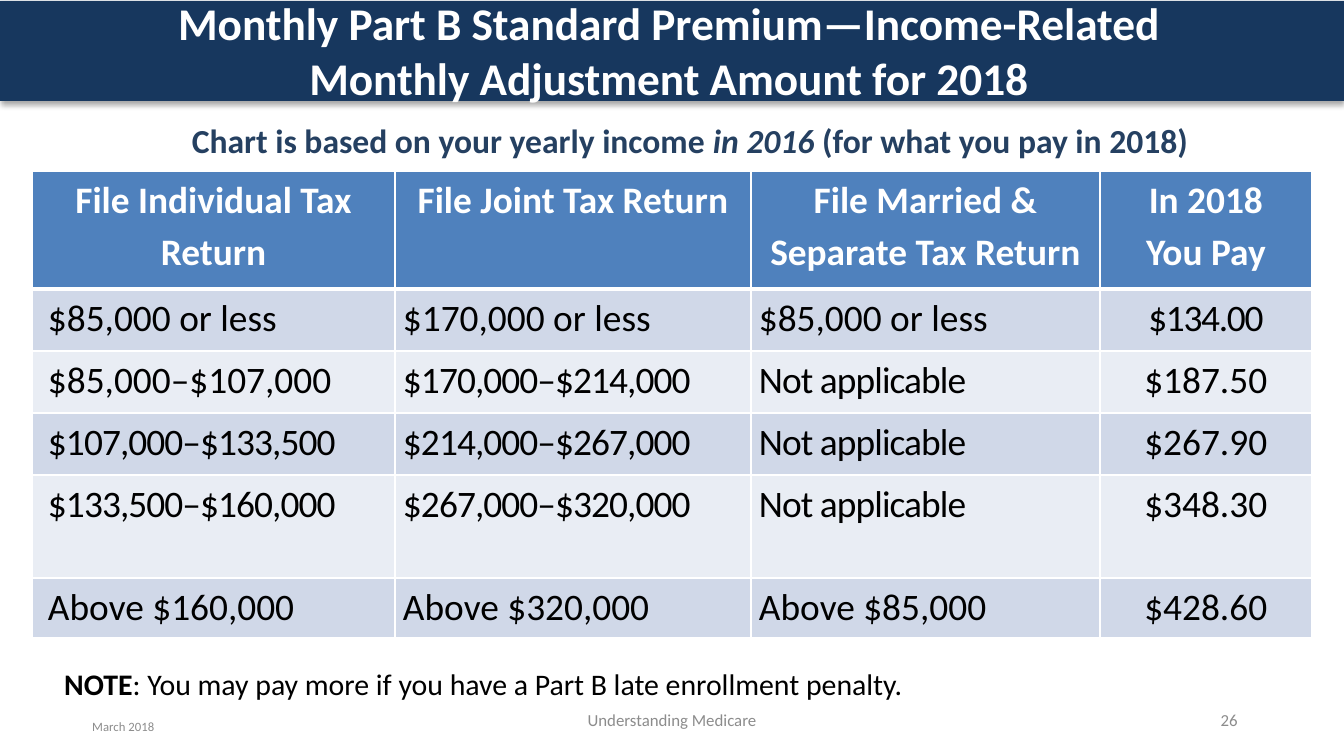
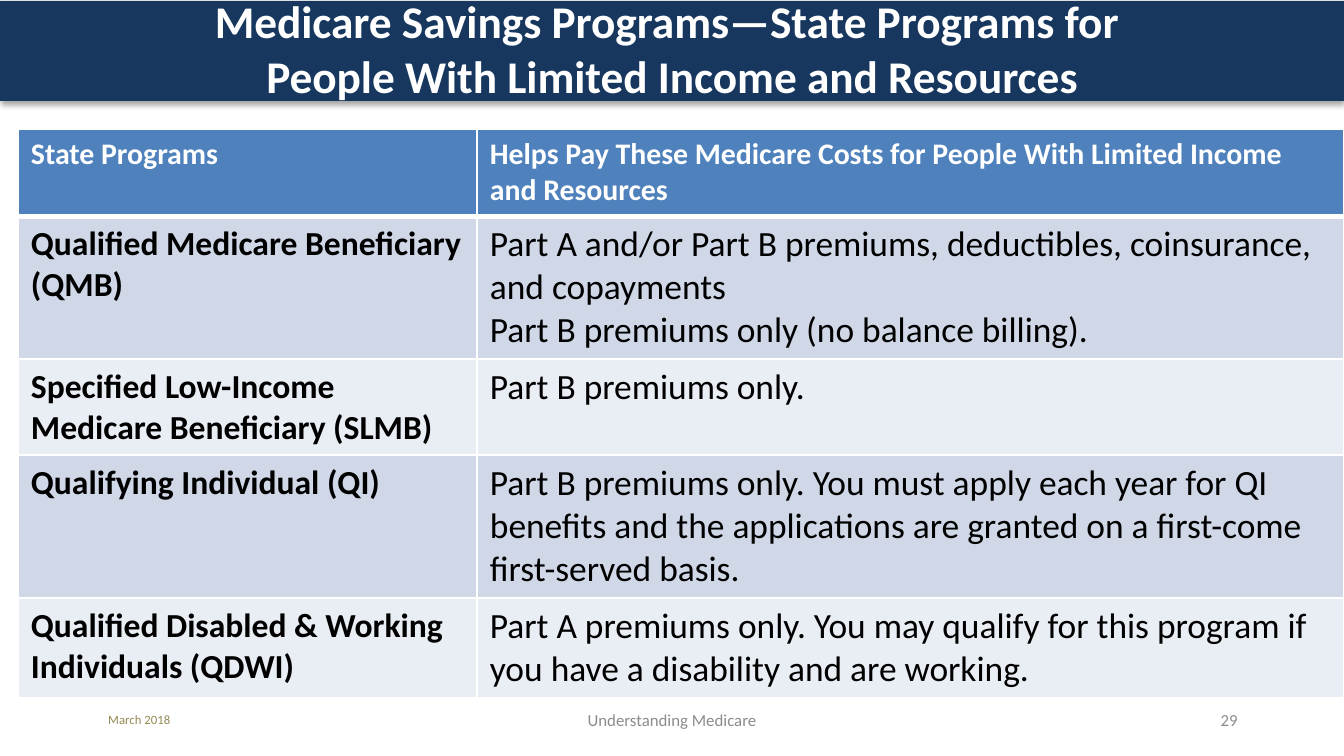
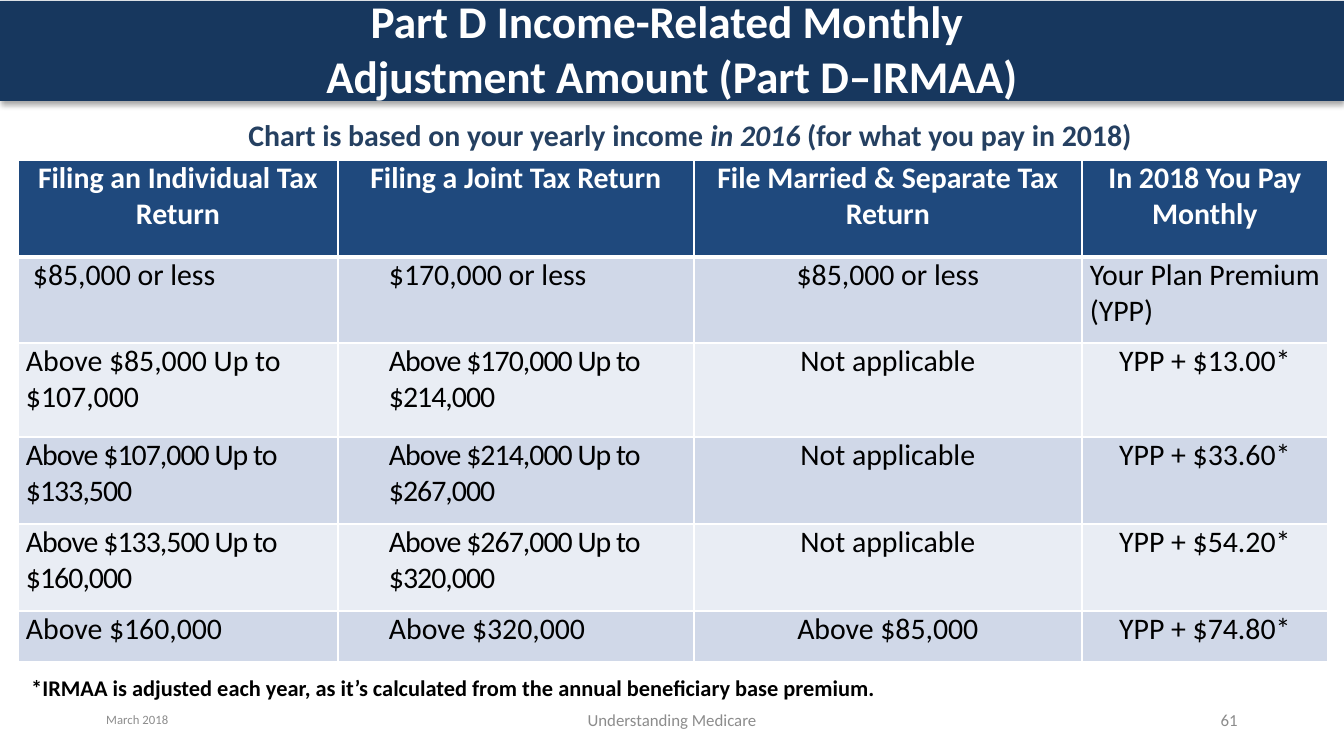
"""Builds three Medicare slides with premium and savings program tables."""
from lxml import etree
from pptx import Presentation
from pptx.dml.color import RGBColor
from pptx.enum.shapes import MSO_SHAPE
from pptx.enum.text import MSO_ANCHOR, MSO_AUTO_SIZE, PP_ALIGN
from pptx.oxml import parse_xml
from pptx.oxml.ns import nsdecls, qn
from pptx.util import Emu, Pt

LEFT, CENTER, RIGHT = PP_ALIGN.LEFT, PP_ALIGN.CENTER, PP_ALIGN.RIGHT
TOP, MIDDLE = MSO_ANCHOR.TOP, MSO_ANCHOR.MIDDLE
FIXED, GROW = MSO_AUTO_SIZE.NONE, MSO_AUTO_SIZE.SHAPE_TO_FIT_TEXT
RECT = MSO_SHAPE.RECTANGLE

WHITE = RGBColor(0xFF, 0xFF, 0xFF)
BLACK = RGBColor(0x00, 0x00, 0x00)
NAVY = RGBColor(0x17, 0x37, 0x5E)
INK = RGBColor(0x25, 0x40, 0x61)
BLUE = RGBColor(0x4F, 0x81, 0xBD)
DEEP = RGBColor(0x1F, 0x49, 0x7D)
DARK = RGBColor(0xD0, 0xD8, 0xE8)
PALE = RGBColor(0xE9, 0xED, 0xF4)
GRAY = RGBColor(0x8C, 0x8C, 0x8C)
TAN = RGBColor(0x94, 0x8A, 0x54)
PX = 914400 / 134.4
TITLE = {"name": "Calibri", "size": Pt(24.3), "bold": True, "color": WHITE}


def style(font, look):
    """Set each format value on a font."""
    for key, value in look.items():
        if key == "color":
            font.color.rgb = value
        else:
            setattr(font, key, value)


def label(slide, box, parts, size, color, align=LEFT, anchor=TOP, fit=FIXED, wrap=True):
    """Add a one-line text box from (text, bold, italic) parts."""
    frame = slide.shapes.add_textbox(*[Emu(round(v * PX)) for v in box]).text_frame
    frame.word_wrap, frame.auto_size, frame.vertical_anchor = wrap, fit, anchor
    para = frame.paragraphs[0]
    para.alignment = align
    for text, bold, slant in parts:
        run = para.add_run()
        run.text = text
        style(run.font, {"name": "Calibri", "size": Pt(size), "bold": bold,
                         "italic": slant, "color": color})
    return para


PAGES = [
    {
        "title": "Monthly Part B Standard Premium—Income-Related Monthly Adjustment Amount for 2018",
        "place": (155, -5, 1028, 110),
        "chart": ((161, 113, 1058, 54), 18),
        "date": ((79, 707, 227, 40), GRAY), "page": "26",
        "spot": (32, 171), "high": 467, "head": BLUE, "pad": (8, 0), "lead": 1.15,
        "cols": [363, 356, 349, 212], "tall": [118, 62, 62, 62, 103, 60],
        "sizes": [20] * 4, "first": 20, "bold": (),
        "align": [LEFT, LEFT, LEFT, CENTER], "top": CENTER,
        "indent": [8, 0, 0, 0], "shift": {}, "turn": {},
        "tight": {(1, 3): -70, (2, 1): -50, (2, 2): -50, (3, 0): -50, (3, 1): -50,
                  (3, 2): -50, (4, 0): -50, (4, 1): -50, (4, 2): -50},
        "rows": [
            ["File Individual Tax Return", "File Joint Tax Return",
             "File Married & Separate Tax Return", "In 2018\nYou Pay"],
            ["$85,000 or less", "$170,000 or less", "$85,000 or less", "$134.00"],
            ["$85,000–$107,000", "$170,000–$214,000", "Not applicable", "$187.50"],
            ["$107,000–$133,500", "$214,000–$267,000", "Not applicable", "$267.90"],
            ["$133,500–$160,000", "$267,000–$320,000", "Not applicable", "$348.30"],
            ["Above $160,000", "Above $320,000", "Above $85,000", "$428.60"],
        ],
    },
    {
        "title": "Medicare Savings Programs—State Programs for \vPeople With Limited Income and Resources",
        "place": (93, 13, 1158, 70),
        "date": ((95, 700, 227, 40), TAN), "page": "29",
        "spot": (18, 129), "high": 564, "head": BLUE, "pad": (13, 7), "lead": 1.0,
        "cols": [459, 867], "tall": [51, 138, 95, 94, 87],
        "sizes": [18, 19], "first": 16, "bold": (0,),
        "align": [LEFT, LEFT], "top": LEFT,
        "indent": [0, 0], "shift": {}, "turn": {}, "tight": {},
        "rows": [
            ["State Programs",
             "Helps Pay These Medicare Costs for People With Limited Income and Resources"],
            ["Qualified Medicare Beneficiary (QMB)",
             "Part A and/or Part B premiums, deductibles, coinsurance, and copayments\n"
             "Part B premiums only (no balance billing)."],
            ["Specified Low-Income Medicare Beneficiary (SLMB)", "Part B premiums only."],
            ["Qualifying Individual (QI)",
             "Part B premiums only. You must apply each year for QI benefits and the "
             "applications are granted on a first-come first-served basis."],
            ["Qualified Disabled & Working Individuals (QDWI)",
             "Part A premiums only. You may qualify for this program if you have a "
             "disability and are working."],
        ],
    },
    {
        "title": "Part D Income-Related Monthly \vAdjustment Amount (Part D–IRMAA)",
        "place": (93, 13, 1158, 70),
        "chart": ((161, 110, 1058, 50), 16),
        "date": ((93, 700, 227, 40), GRAY), "page": "61",
        "spot": (18, 160), "high": 502, "head": DEEP, "pad": (8, 0), "lead": 1.0,
        "cols": [320, 356, 388, 246], "tall": [97, 86, 94, 87, 87, 51],
        "sizes": [16] * 4, "first": 16, "bold": (),
        "align": [LEFT, LEFT, CENTER, CENTER], "top": CENTER,
        "indent": [0, 43, 0, 0], "shift": {(1, 0): 7}, "turn": {(1, 3): LEFT},
        "tight": {(2, 1): -50, (3, 0): -50, (3, 1): -50, (4, 0): -50, (4, 1): -50},
        "rows": [
            ["Filing an Individual Tax Return", "Filing a Joint Tax Return",
             "File Married & Separate Tax Return", "In 2018 You Pay Monthly"],
            ["$85,000 or less", "$170,000 or less", "$85,000 or less",
             "Your Plan Premium (YPP)"],
            ["Above $85,000 Up to $107,000", "Above $170,000 Up to $214,000",
             "Not applicable", "YPP + $13.00*"],
            ["Above $107,000 Up to $133,500", "Above $214,000 Up to $267,000",
             "Not applicable", "YPP + $33.60*"],
            ["Above $133,500 Up to $160,000", "Above $267,000 Up to $320,000",
             "Not applicable", "YPP + $54.20*"],
            ["Above $160,000", "Above $320,000", "Above $85,000", "YPP + $74.80*"],
        ],
    },
]

deck = Presentation()
deck.slide_width, deck.slide_height = Emu(round(1344 * PX)), Emu(round(756 * PX))
layout = deck.slide_layouts[5]
for extra in list(layout.placeholders)[1:]:
    layout.shapes.element.remove(extra.element)
slides = [deck.slides.add_slide(layout) for _ in PAGES]

band = slides[0].shapes.add_shape(RECT, *[Emu(round(v * PX)) for v in (0, 1, 1344, 100)])
band.fill.solid()
band.fill.fore_color.rgb = NAVY
band.line.fill.background()
band.element.spPr.append(parse_xml(
    f'<a:effectLst {nsdecls("a")}><a:outerShdw blurRad="40000" dist="23000" dir="5400000" '
    'rotWithShape="0"><a:srgbClr val="000000"><a:alpha val="35000"/></a:srgbClr>'
    '</a:outerShdw></a:effectLst>'))
band.element.nvSpPr.cNvPr.set("id", "20")
layout.shapes.element.insert(2, band.element)

for slide, page in zip(slides, PAGES):
    title = slide.shapes.title
    title.left, title.top, title.width, title.height = [
        Emu(round(v * PX)) for v in page["place"]]
    frame = title.text_frame
    frame.text = page["title"]
    frame.word_wrap, frame.auto_size, frame.vertical_anchor = True, FIXED, MIDDLE
    frame.paragraphs[0].alignment = CENTER
    for run in frame.paragraphs[0].runs:
        style(run.font, TITLE)

    if "chart" in page:
        box, size = page["chart"]
        label(slide, box, [("Chart is based on your yearly income ", True, False),
                           ("in 2016 ", True, True),
                           ("(for what you pay in 2018)", True, False)],
              size, INK, CENTER, fit=GROW)

    rows, cols = page["rows"], page["cols"]
    area = [Emu(round(v * PX)) for v in (*page["spot"], sum(cols), page["high"])]
    holder = slide.shapes.add_table(len(rows), len(cols), *area)
    table = holder.table
    for col, width in zip(table.columns, cols):
        col.width = Emu(round(width * PX))
    for row, height in zip(table.rows, page["tall"]):
        row.height = Emu(round(height * PX))
    holder.height = area[3]
    side, edge = [Emu(round(v * PX)) for v in page["pad"]]

    for r, texts in enumerate(rows):
        for c, text in enumerate(texts):
            cell, key, head = table.cell(r, c), (r, c), r == 0
            cell.margin_left = cell.margin_right = side
            cell.margin_top = cell.margin_bottom = edge
            props = cell._tc.get_or_add_tcPr()
            for tag in ("lnL", "lnR", "lnT", "lnB"):
                thick = (head and tag == "lnB") or (r == 1 and tag == "lnT")
                line = etree.SubElement(props, qn("a:" + tag), w="38100" if thick else "12700")
                solid = etree.SubElement(line, qn("a:solidFill"))
                etree.SubElement(solid, qn("a:srgbClr"), val=str(WHITE))
            cell.fill.solid()
            cell.fill.fore_color.rgb = page["head"] if head else DARK if r % 2 else PALE
            cell.text_frame.text = text
            look = {"name": "Calibri", "size": Pt(page["first"] if head else page["sizes"][c]),
                    "bold": head or c in page["bold"], "color": WHITE if head else BLACK}
            indent = 0 if head else page["shift"].get(key, page["indent"][c])
            for para in cell.text_frame.paragraphs:
                para.alignment = page["top"] if head else page["turn"].get(key, page["align"][c])
                para.line_spacing = page["lead"]
                if indent:
                    para._p.get_or_add_pPr().set("marL", str(round(indent * PX)))
                for run in para.runs:
                    style(run.font, look)
                    if key in page["tight"]:
                        run._r.get_or_add_rPr().set("spc", str(page["tight"][key]))

    box, color = page["date"]
    label(slide, box, [("March 2018", False, False)], 6.8, color, anchor=MIDDLE)
    label(slide, (445, 700, 454, 40), [("Understanding Medicare", False, False)],
          9, GRAY, CENTER, MIDDLE)
    label(slide, (949, 700, 302, 40), [(page["page"], False, False)], 9, GRAY, RIGHT, MIDDLE)

note = label(slides[0], (51, 659, 993, 50),
             [("NOTE", True, False),
              (": You may pay more if you have a Part B late enrollment penalty.", False, False)],
             16, BLACK, fit=GROW)
hang = round(82 * PX)
note._p.get_or_add_pPr().set("marL", str(hang))
note._p.get_or_add_pPr().set("indent", str(-hang))
label(slides[2], (18, 668, 882, 40),
      [("*IRMAA is adjusted each year, as it’s calculated from the annual beneficiary base premium.",
        True, False)], 12, BLACK, fit=GROW, wrap=False)

deck.save("out.pptx")
